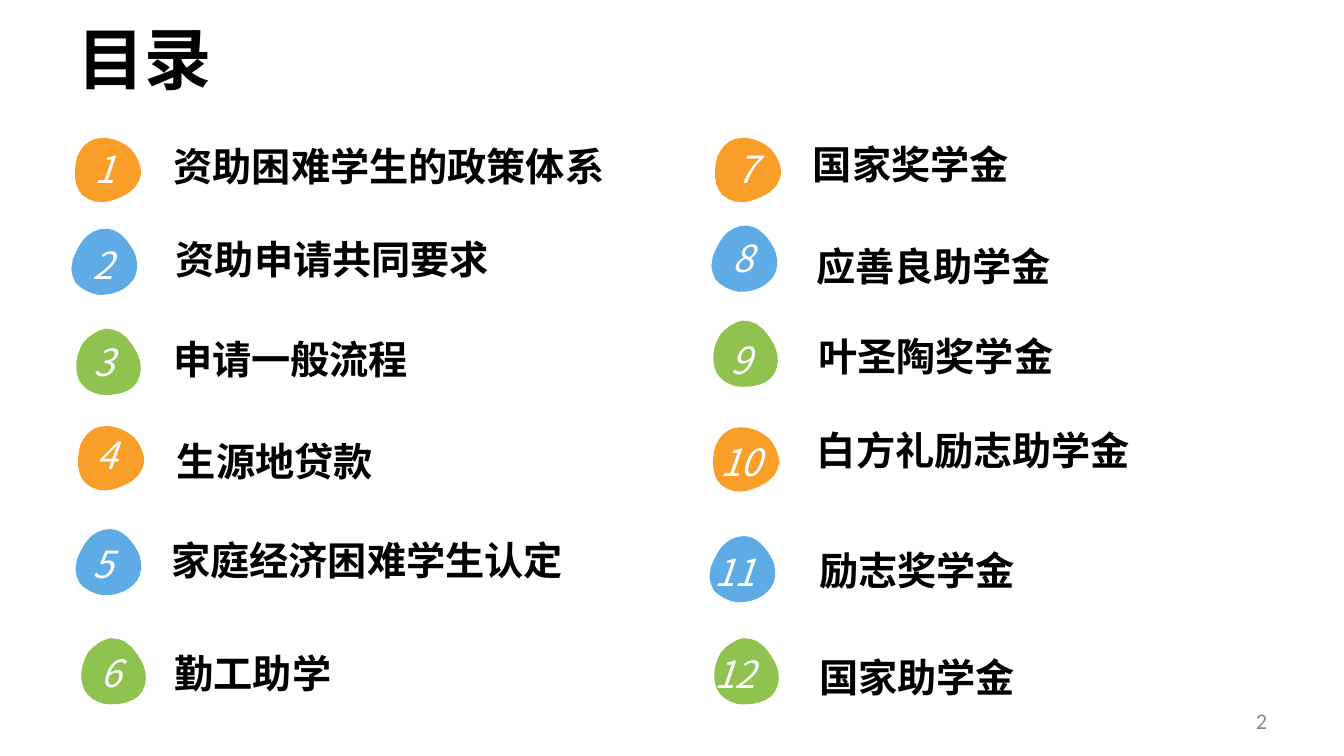
from dataclasses import dataclass
from typing import NamedTuple

from lxml.etree import SubElement
from pptx import Presentation
from pptx.dml.color import RGBColor
from pptx.enum.text import MSO_ANCHOR, MSO_AUTO_SIZE, PP_ALIGN
from pptx.oxml.ns import qn
from pptx.util import Pt


@dataclass(frozen=True)
class Theme:
    ink: str = "000000"
    paper: str = "FFFFFF"
    muted: str = "8C8C8C"
    badges: tuple = (("F89E29", 158.4), ("5EABE6", 299.2), ("90C250", 58.8))
    latin: str = "Calibri"
    han: str = "Noto Sans CJK SC"
    title: float = 48
    number: float = 26.7
    label: float = 28
    page: float = 16


class Box(NamedTuple):
    left: float
    top: float
    width: float
    height: float

    def inner(self, left, top, width, height):
        return Box(self.left + left, self.top + top, width, height)


THEME = Theme()
BADGE_SIZE = (47.5, 45.4)
PEBBLE_OUTLINE = [
    (257, -215), (206, -260), (148, -291), (90, -307), (38, -313), (-38, -313),
    (-127, -303), (-215, -269), (-265, -228), (-309, -171), (-325, -111),
    (-329, -39), (-321, 27), (-304, 89), (-269, 147), (-227, 200), (-178, 244),
    (-121, 280), (-70, 299), (-16, 311), (39, 309), (100, 292), (154, 259),
    (205, 216), (237, 170), (265, 121), (288, 70), (305, 18), (316, -46),
    (312, -106), (293, -163),
]

LEFT_TOPICS = [
    ("资助困难学生的政策体系", (1.8, 7.9), (2.2, 2.9, 42.5), (62.6, 0)),
    ("资助申请共同要求", (1.8, 75.6), (0.7, 3.6, 42.5), (64.8, -0.7)),
    ("申请一般流程", (2.6, 147.6), (0, 1.4, 42.5), (62.6, -1.4)),
    ("生源地贷款", (4, 213.8), (1.4, 1.4, 42.5), (64.1, 5)),
    ("家庭经济困难学生认定", (4.7, 290.2), (-2.2, 2.9, 42.5), (58.3, -0.7)),
    ("勤工助学", (6.2, 368.6), (1.4, 2.2, 42.5), (60.5, 1.4)),
]
RIGHT_TOPICS = [
    ("国家奖学金", (4, 7.9), (2.9, 2.9, 42.5), (63.4, -1.4)),
    ("应善良助学金", (4, 73.4), (0.7, 0.7, 42.5), (65.5, 5.8)),
    ("叶圣陶奖学金", (2.6, 141.8), (0.7, 5.8, 42.5), (68.4, 2.2)),
    ("白方礼励志助学金", (2.6, 214.6), (-8.6, 5.8, 60.5), (67, -3.6)),
    ("励志奖学金", (2.6, 295.2), (-22.3, 3.6, 79.2), (69.1, 1.4)),
    ("国家助学金", (3.3, 368.6), (-23, 2.9, 79.2), (68.4, 4.3)),
]


def place(part, box):
    for side, length in box._asdict().items():
        setattr(part, side, Pt(length))


def write(part, words, color, align=PP_ALIGN.LEFT, frame_format=None, **font_format):
    frame = part.text_frame
    frame.text = words
    frame_values = dict(
        word_wrap=True,
        auto_size=MSO_AUTO_SIZE.SHAPE_TO_FIT_TEXT,
        vertical_anchor=MSO_ANCHOR.TOP,
    )
    frame_values.update(frame_format or {})
    for key, value in frame_values.items():
        setattr(frame, key, value)
    paragraph = frame.paragraphs[0]
    paragraph.alignment = align
    run = paragraph.runs[0]
    for key, value in font_format.items():
        setattr(run.font, key, value)
    run.font.color.rgb = RGBColor.from_string(color)
    SubElement(run.font._element, qn("a:ea")).set("typeface", THEME.han)


def add_words(slide, box, words, color, **formats):
    words_box = slide.shapes.add_textbox(*map(Pt, box))
    write(words_box, words, color, **formats)
    place(words_box, box)


def add_badge(slide, box, color, rotation):
    builder = slide.shapes.build_freeform(*PEBBLE_OUTLINE[0], scale=Pt(0.072))
    builder.add_line_segments(PEBBLE_OUTLINE[1:], close=True)
    badge = builder.convert_to_shape(Pt(box.left), Pt(box.top))
    place(badge, box)
    badge.rotation = rotation
    badge.shadow.inherit = False
    badge.fill.solid()
    badge.fill.fore_color.rgb = RGBColor.from_string(color)
    badge.line.fill.background()


def add_topic(slide, box, number, topic, number_offset, label_offset):
    add_badge(slide, box, *THEME.badges[(number - 1) % len(THEME.badges)])
    add_words(
        slide, box.inner(*number_offset, 39.6), str(number), THEME.paper,
        align=PP_ALIGN.CENTER, name=THEME.han, size=Pt(THEME.number), italic=True,
    )
    label_width = 28.4 * len(topic) + 14.4
    add_words(
        slide, box.inner(*label_offset, label_width, 41), topic, THEME.ink,
        align=PP_ALIGN.CENTER, frame_format=dict(word_wrap=False),
        name=THEME.latin, size=Pt(THEME.label), bold=True,
    )


def add_column(slide, box, topics, first_number):
    for number, (topic, badge_offset, *offsets) in enumerate(topics, first_number):
        add_topic(slide, box.inner(*badge_offset, *BADGE_SIZE), number, topic, *offsets)


def add_title(slide, box):
    title = slide.shapes.title
    write(title, "目录", THEME.ink, name=THEME.han, size=Pt(THEME.title), bold=True)
    place(title, box)


def add_page_number(slide, box):
    add_words(
        slide, box, "2", THEME.muted, align=PP_ALIGN.RIGHT,
        frame_format=dict(vertical_anchor=MSO_ANCHOR.MIDDLE, auto_size=MSO_AUTO_SIZE.NONE),
        name=THEME.latin, size=Pt(THEME.page),
    )


def build_contents(deck):
    slide = deck.slides.add_slide(deck.slide_layouts[5])
    add_title(slide, Box(48.2, 8.6, 350, 65.5))
    add_column(slide, Box(50, 90, 400, 420), LEFT_TOPICS, 1)
    add_column(slide, Box(505, 90, 400, 420), RIGHT_TOPICS, len(LEFT_TOPICS) + 1)
    add_page_number(slide, Box(688.3, 500.4, 223.9, 28.8))


def main():
    deck = Presentation()
    deck.slide_width, deck.slide_height = Pt(960), Pt(540)
    build_contents(deck)
    deck.save("out.pptx")


if __name__ == "__main__":
    main()
